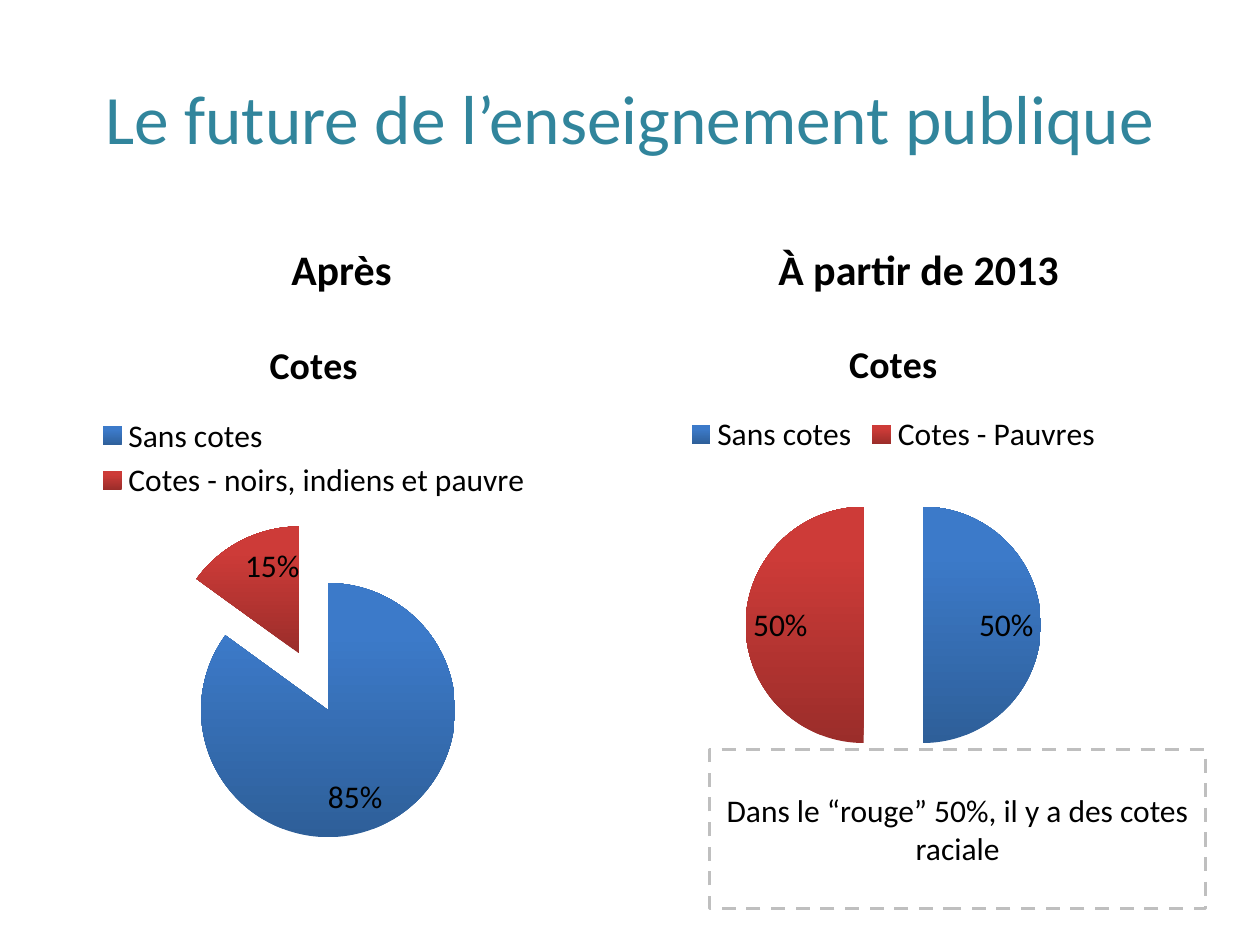
"""Build a slide with two pie charts on quotas in public education."""
from lxml import etree
from pptx import Presentation
from pptx.chart.data import CategoryChartData
from pptx.dml.color import RGBColor
from pptx.enum.chart import XL_CHART_TYPE as CHART, XL_LABEL_POSITION as LABEL, XL_LEGEND_POSITION as LEGEND
from pptx.enum.dml import MSO_LINE
from pptx.enum.shapes import MSO_SHAPE
from pptx.enum.text import MSO_ANCHOR as ANCHOR, PP_ALIGN
from pptx.oxml.ns import qn
from pptx.util import Inches, Pt


def rgb(value):
    return RGBColor.from_string(value)


def write(sp, text, size, color="000000", bold=False, anchor=ANCHOR.MIDDLE):
    tf = sp.text_frame
    tf.word_wrap = True
    tf.vertical_anchor = anchor
    p = tf.paragraphs[0]
    p.text = text
    p.alignment = PP_ALIGN.CENTER
    p.font.name = "Calibri"
    p.font.size = Pt(size)
    p.font.bold = bold
    p.font.color.rgb = rgb(color)


prs = Presentation()
prs.slide_width, prs.slide_height = Inches(10), Inches(7.5)
s = prs.slides.add_slide(prs.slide_layouts[5])

title = s.shapes.title
title.left, title.top = Inches(0.5), Inches(0.3)
title.width, title.height = Inches(9), Inches(1.25)
write(title, "Le future de l’enseignement publique", 39.6, "31859C")

for left, text in [(0.5, "Après"), (5.08, "À partir de 2013")]:
    heading = s.shapes.add_textbox(Inches(left), Inches(1.68), Inches(4.42), Inches(0.7))
    write(heading, text, 24, bold=True, anchor=ANCHOR.BOTTOM)

pies = [
    (0.28, 4.42, 4.32, "Cotes - noirs, indiens et pauvre", (85, 15)),
    (4.06, 6.06, 3.78, "Cotes - Pauvres", (50, 50)),
]
gradients = [("2E5F99", "3C7AC9"), ("9B2D2A", "CD3B38")]

for left, width, height, quota, values in pies:
    data = CategoryChartData()
    data.categories = ["Sans cotes", quota]
    data.add_series("Cotes", values)
    chart = s.shapes.add_chart(CHART.PIE, Inches(left), Inches(2.49),
                               Inches(width), Inches(height), data).chart
    chart.font.name = "Calibri"
    chart.font.size = Pt(18)
    chart.font.color.rgb = rgb("000000")

    chart.has_title = True
    p = chart.chart_title.text_frame.paragraphs[0]
    p.text = "Cotes"
    p.font.name = "Calibri"
    p.font.size = Pt(21.6)
    p.font.bold = True
    p.font.color.rgb = rgb("000000")

    chart.has_legend = True
    chart.legend.position = LEGEND.TOP
    chart.legend.include_in_layout = False

    plot = chart.plots[0]
    plot.vary_by_categories = True
    plot.has_data_labels = True
    labels = plot.data_labels
    labels.show_percentage = True
    labels.show_value = False
    labels.number_format = "0%"
    labels.number_format_is_linked = False
    labels.position = LABEL.INSIDE_END

    series = plot.series[0]
    for i, (dark, light) in enumerate(gradients):
        fill = series.points[i].format.fill
        fill.gradient()
        fill.gradient_angle = 90
        start, end = fill.gradient_stops
        start.color.rgb, end.color.rgb = rgb(dark), rgb(light)
        start.position, end.position = 0, 0.8
    explosion = etree.Element(qn("c:explosion"), val="25")
    series._element.find(qn("c:dPt")).addprevious(explosion)

note = s.shapes.add_shape(MSO_SHAPE.RECTANGLE, Inches(5.63), Inches(5.95), Inches(3.94), Inches(1.26))
note.shadow.inherit = False
note.fill.solid()
note.fill.fore_color.rgb = rgb("FFFFFF")
note.line.color.rgb = rgb("BFBFBF")
note.line.width = Pt(2)
note.line.dash_style = MSO_LINE.DASH
write(note, "Dans le “rouge” 50%, il y a des cotes raciale", 18)

prs.save("out.pptx")
